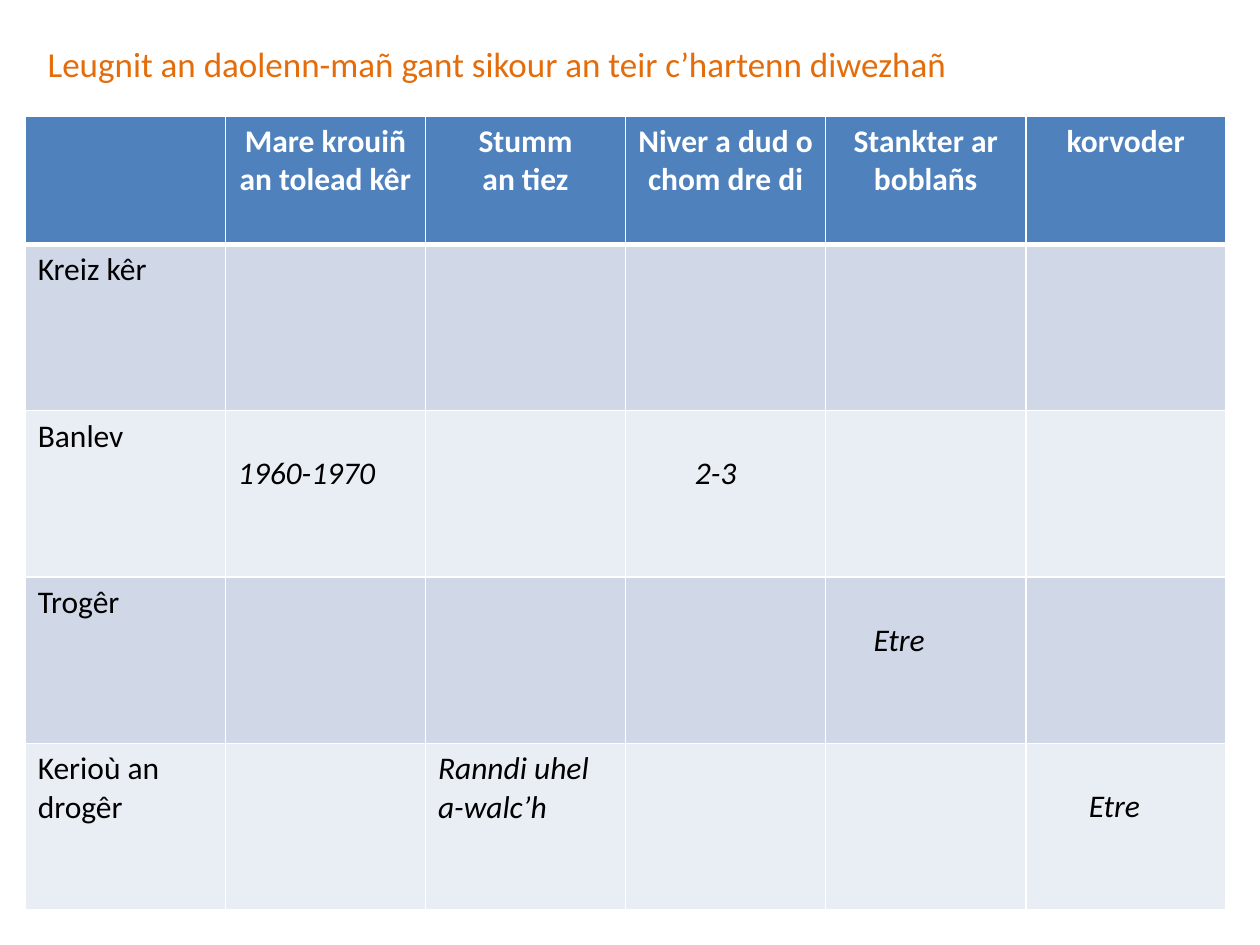
"""Build a worksheet slide with a table on the parts of a town."""
import dataclasses

import lxml.etree
import pptx
import pptx.dml.color
import pptx.enum.text
import pptx.oxml.ns
import pptx.util

Inches = pptx.util.Inches
Align = pptx.enum.text.PP_ALIGN


@dataclasses.dataclass(frozen=True)
class Theme:
    font: str = "Calibri"
    title: str = "E46C0A"
    head: str = "4F81BD"
    bands: tuple = ("D0D8E8", "E9EDF4")
    white: str = "FFFFFF"
    ink: str = "000000"
    large: int = 20
    body: int = 18
    thin: int = 1
    thick: int = 3


class Deck:
    def __init__(self, theme):
        self.theme = theme
        self.file = pptx.Presentation()
        self.file.slide_width, self.file.slide_height = Inches(10), Inches(7.5)
        self.slide = self.file.slides.add_slide(self.file.slide_layouts[6])

    def label(self, frame, text, size, color, bold=False, italic=False, align=Align.LEFT):
        frame.word_wrap = True
        frame.text = text
        for line in frame.paragraphs:
            line.alignment = align
            font = line.font
            font.name, font.size = self.theme.font, pptx.util.Pt(size)
            font.bold, font.italic = bold, italic
            font.color.rgb = pptx.dml.color.RGBColor.from_string(color)

    def title(self, text, left, top, width, height):
        box = self.slide.shapes.add_textbox(*map(Inches, (left, top, width, height)))
        self.label(box.text_frame, text, self.theme.large, self.theme.title)

    def edge(self, cell, row):
        theme = self.theme
        widths = {"lnL": theme.thin, "lnR": theme.thin,
                  "lnT": theme.thick if row == 1 else theme.thin,
                  "lnB": theme.thick if row == 0 else theme.thin}
        props = cell._tc.get_or_add_tcPr()
        name = pptx.oxml.ns.qn
        for place, (side, width) in enumerate(widths.items()):
            line = lxml.etree.Element(name("a:" + side), w=str(pptx.util.Pt(width)))
            fill = lxml.etree.SubElement(line, name("a:solidFill"))
            lxml.etree.SubElement(fill, name("a:srgbClr"), val=theme.white)
            props.insert(place, line)

    def cell(self, cell, row, col, text):
        theme = self.theme
        shade = theme.bands[(row - 1) % 2] if row else theme.head
        cell.fill.solid()
        cell.fill.fore_color.rgb = pptx.dml.color.RGBColor.from_string(shade)
        self.edge(cell, row)
        self.label(cell.text_frame, text, theme.body,
                   color=theme.ink if row else theme.white, bold=row == 0,
                   italic=row > 0 and col > 0,
                   align=Align.LEFT if row else Align.CENTER)

    def table(self, rows, heights, left, top, width):
        count = len(rows[0])
        frame = self.slide.shapes.add_table(
            len(rows), count, *map(Inches, (left, top, width, sum(heights))))
        table = frame.table
        for col in table.columns:
            col.width = Inches(width / count)
        for row, (texts, height) in enumerate(zip(rows, heights)):
            table.rows[row].height = Inches(height)
            for col, text in enumerate(texts):
                self.cell(table.cell(row, col), row, col, text)
        return table

    def inset(self, cell, indent, drop):
        cell.margin_left = Inches(0.1 + indent)
        cell.margin_top = Inches(0.05 + drop)


def main():
    heads = ["", "Mare krouiñ an tolead kêr", "Stumm\nan tiez",
             "Niver a dud o chom dre di", "Stankter ar boblañs", "korvoder"]
    rows = [
        heads,
        ["Kreiz kêr", "", "", "", "", ""],
        ["Banlev", "1960-1970", "", "2-3", "", ""],
        ["Trogêr", "", "", "", "Etre", ""],
        ["Kerioù an drogêr", "", "Ranndi uhel a-walc’h", "", "", "Etre"],
    ]
    insets = {(2, 1): 0, (2, 3): 0.45, (3, 4): 0.28, (4, 5): 0.4}
    deck = Deck(Theme())
    table = deck.table(rows, [1.02] + [1.32] * 4, 0.2, 0.92, 9.53)
    for spot, indent in insets.items():
        deck.inset(table.cell(*spot), indent, drop=0.3)
    deck.title("Leugnit an daolenn-mañ gant sikour an teir c’hartenn diwezhañ",
               0.28, 0.29, 9.13, 0.44)
    deck.file.save("out.pptx")


if __name__ == "__main__":
    main()
